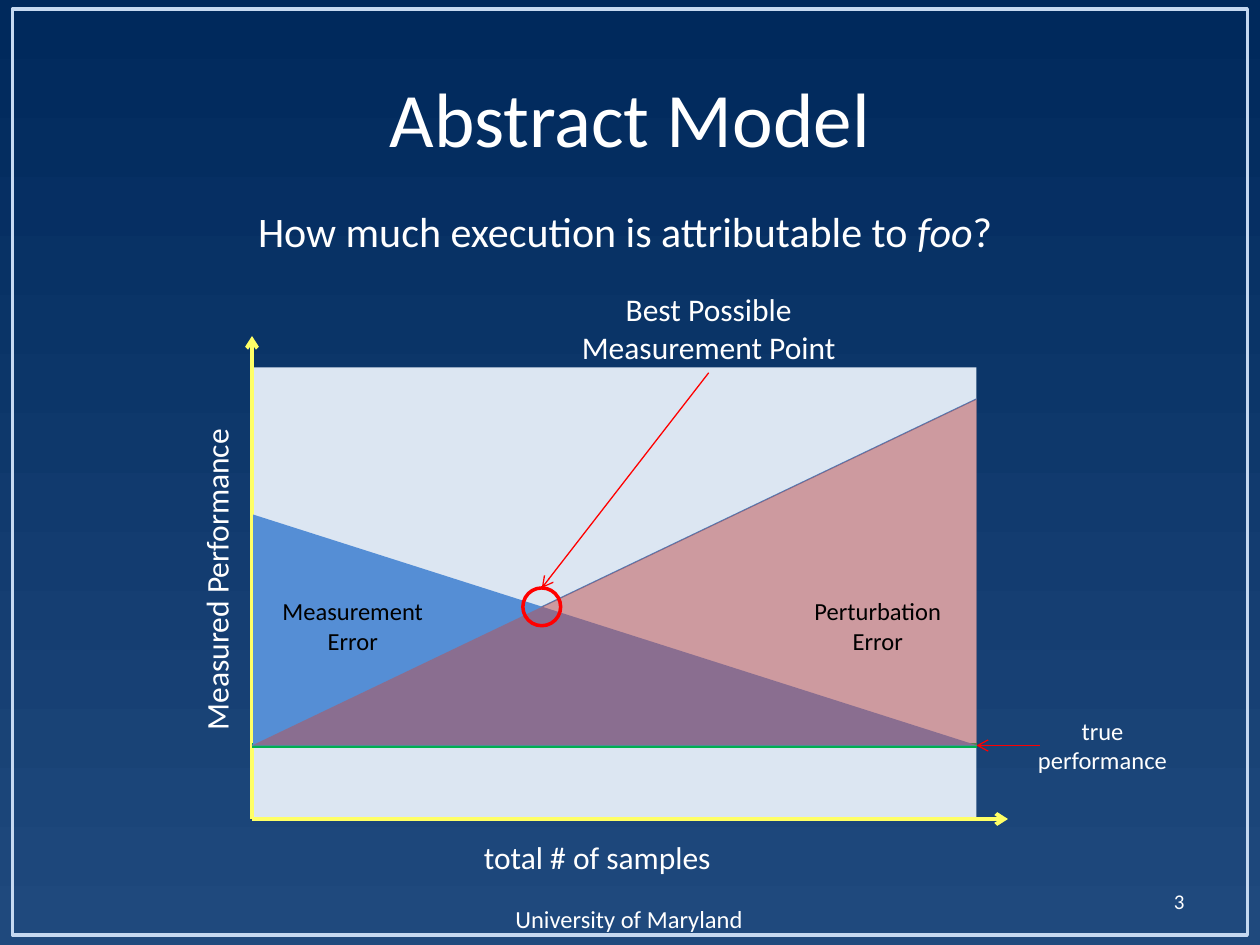
from pptx import Presentation
from pptx.dml.color import RGBColor
from pptx.enum.shapes import MSO_CONNECTOR, MSO_SHAPE
from pptx.enum.text import MSO_ANCHOR, PP_ALIGN
from pptx.oxml.ns import qn
from pptx.util import Inches, Pt
from lxml.etree import SubElement

WHITE = RGBColor(0xFF, 0xFF, 0xFF)
BLACK = RGBColor(0, 0, 0)
NAVY = RGBColor(0x00, 0x29, 0x5C)
BLUE = RGBColor(0x1F, 0x49, 0x7D)
FRAME = RGBColor(0xC6, 0xD9, 0xF1)
PALE = RGBColor(0xDC, 0xE6, 0xF2)
SKY = RGBColor(0x55, 0x8E, 0xD5)
STEEL = RGBColor(0x4B, 0x7E, 0xBC)
BRICK = RGBColor(0xC0, 0x50, 0x4D)
YELLOW = RGBColor(0xFF, 0xFF, 0x66)
GREEN = RGBColor(0x00, 0xB0, 0x50)
RED = RGBColor(0xFF, 0, 0)
LEFT, MID, RIGHT = PP_ALIGN.LEFT, PP_ALIGN.CENTER, PP_ALIGN.RIGHT

prs = Presentation()
prs.slide_width, prs.slide_height = Inches(10), Inches(7.5)
UNIT = prs.slide_width / 120  # square grid: 120 columns, 90 rows

slide = prs.slides.add_slide(prs.slide_layouts[6])
shapes = slide.shapes
back = slide.background.fill
back.gradient()
back.gradient_angle = 90
for stop, color in zip(back.gradient_stops, (BLUE, NAVY)):
    stop.color.rgb = color


def grid(*cells):
    """Turn grid columns and rows into lengths."""
    return [round(cell * UNIT) for cell in cells]


# Plot edges in grid columns and rows
x0, x1 = 24, 93
top, base, floor = 35, 71, 78
rise, fall = 38, 49  # upper ends of the two error wedges

# Shapes: kind, place, fill, line, line width, apex
RECT, WEDGE, RING = MSO_SHAPE.RECTANGLE, MSO_SHAPE.ISOSCELES_TRIANGLE, MSO_SHAPE.OVAL
parts = [
    ("frame", RECT, (1.2, 0.84, 117.6, 88.2), None, FRAME, 2, None),
    ("plot", RECT, (x0, top, x1 - x0, floor - top), PALE, None, 0, None),
    ("measure", WEDGE, (x0 + 0.1, fall, x1 - x0, base - fall), SKY, None, 0, 0),
    ("perturb", WEDGE, (x0, rise, x1 - x0, base - rise), BRICK, None, 0, 1),
    ("best", RING, (49.8, 56, 3.6, 3.6), None, RED, 2, None),
]
# Lines: start, end, colour, width, arrow
rules = [
    ((x0, floor), (x0, 32), YELLOW, 2.25, True),
    ((x0, floor), (96, floor), YELLOW, 2.25, True),
    ((x0, base), (x1, base), GREEN, 3, False),
    ((x0, base), (x1, rise), STEEL, 0.75, False),
    ((67.5, 35.5), (51.6, 56), RED, 0.75, True),
    ((99, base), (x1, base), RED, 0.75, True),
]
# Texts: words, place, size, colour, alignment, wrap
texts = [
    ("University of Maryland", (47.9, 85.5, 24.3, 4.1), 14, WHITE, LEFT, False),
    ("Abstract Model", (6, 3.6, 108, 15), 44, WHITE, MID, True),
    ("true performance", (97, 67.6, 16, 6.8), 14, WHITE, MID, True),
    ("Measured Performance", (-2.2, 52.8, 45.6, 4.8), 18, WHITE, MID, True),
    ("total # of samples", (44.9, 79.2, 24.4, 4.8), 18, WHITE, LEFT, False),
    ("Perturbation\nError", (76, 56.2, 15.2, 6.8), 14, BLACK, MID, False),
    ("Measurement\nError", (25.2, 56.2, 16.8, 6.8), 14, BLACK, MID, False),
    ("Best Possible\nMeasurement Point", (54, 27, 27, 8.5), 18, WHITE, MID, False),
    ("3", (86, 83.4, 28, 4.8), 12, WHITE, RIGHT, True),
    ("How much execution is attributable to ", (23.4, 19, 73.1, 6), 24, WHITE, LEFT, False),
]

made = {}
for name, kind, place, fill, line, width, apex in parts:
    shape = made[name] = shapes.add_shape(kind, *grid(*place))
    shape.shadow.inherit = False
    if apex is not None:
        shape.adjustments[0] = apex
    if fill is None:
        shape.fill.background()
    else:
        shape.fill.solid()
        shape.fill.fore_color.rgb = fill
    if line is None:
        shape.line.fill.background()
    else:
        shape.line.color.rgb = line
        shape.line.width = Pt(width)

tint = made["perturb"].fill._xPr.find(qn("a:solidFill"))[0]
SubElement(tint, qn("a:alpha"), val="50000")

wires = []
for start, end, color, width, arrow in rules:
    wire = shapes.add_connector(MSO_CONNECTOR.STRAIGHT, *grid(*start, *end))
    wire.line.color.rgb = color
    wire.line.width = Pt(width)
    if arrow:
        SubElement(wire.line._get_or_add_ln(), qn("a:tailEnd"), type="arrow")
    SubElement(wire._element.spPr, qn("a:effectLst"))
    wires.append(wire)

# The plot's lines lie beneath its wedges
for name in ("measure", "perturb", "best"):
    wires[3]._element.getparent().insert_element_before(made[name]._element, "p:extLst")
for wire in wires[4:]:
    wire._element.getparent().append(wire._element)

boxes = {}
for words, place, size, color, align, wrap in texts:
    box = boxes[words] = shapes.add_textbox(*grid(*place))
    frame = box.text_frame
    frame.word_wrap = wrap
    frame.text = words
    for para in frame.paragraphs:
        para.alignment = align
        para.font.name = "Calibri"
        para.font.size = Pt(size)
        para.font.color.rgb = color

for words in ("Abstract Model", "3"):
    boxes[words].text_frame.vertical_anchor = MSO_ANCHOR.MIDDLE
boxes["Measured Performance"].rotation = 270

ask = boxes["How much execution is attributable to "].text_frame.paragraphs[0]
for words, slant in (("foo", True), ("?", False)):
    run = ask.add_run()
    run.text = words
    run.font.italic = slant

wires[4].begin_connect(boxes["Best Possible\nMeasurement Point"], 2)
wires[4].end_connect(made["best"], 0)

prs.save("out.pptx")
